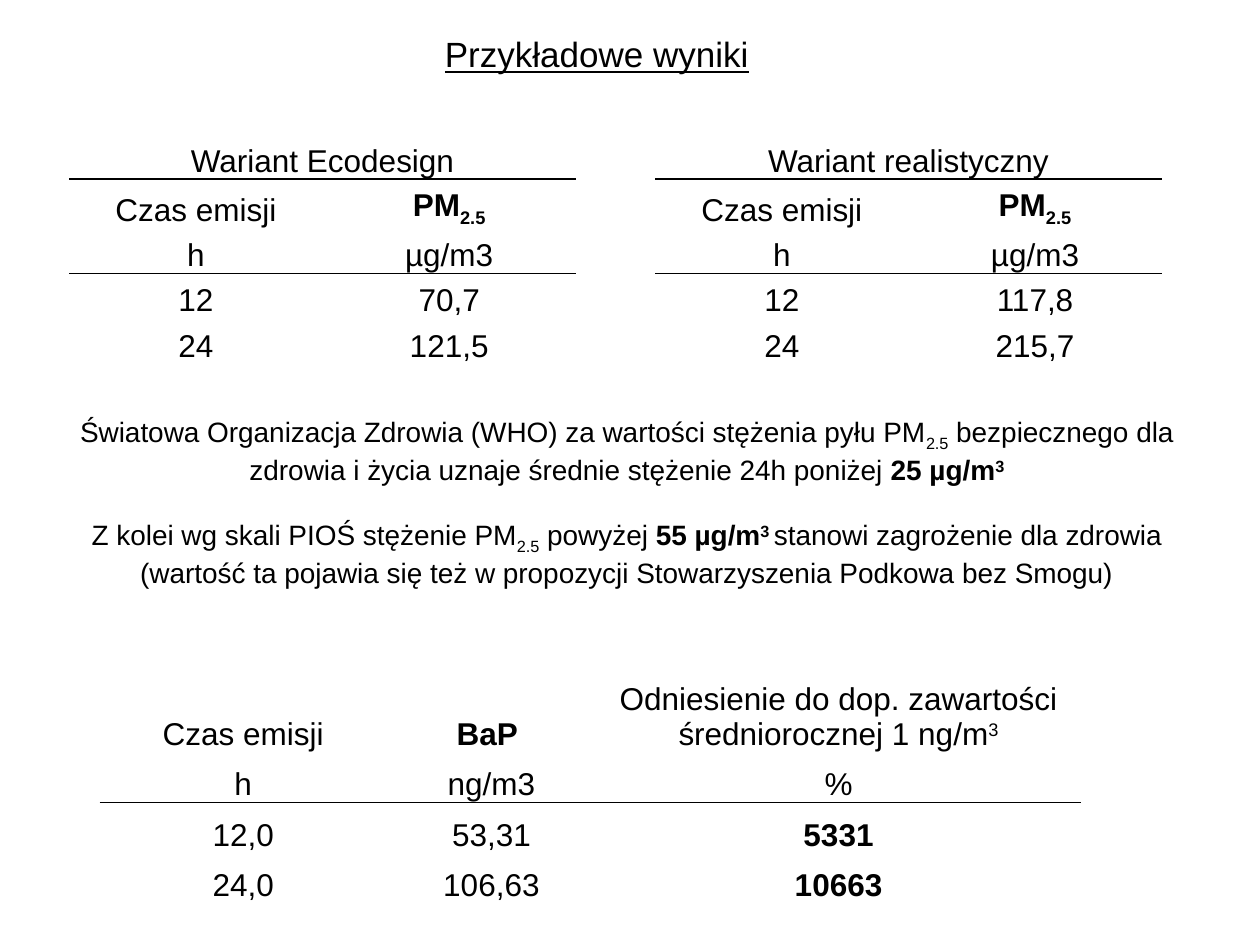
from lxml.etree import SubElement
from pptx import Presentation
from pptx.dml.color import RGBColor
from pptx.enum.text import MSO_ANCHOR, MSO_AUTO_SIZE, PP_ALIGN
from pptx.oxml.ns import qn
from pptx.util import Inches, Pt

COLORS = {"text": "000000", "rule": "000000"}
FONT = "Arial"
BASELINES = {"sub": "-25000", "sup": "30000"}
PM_HEADING = [("PM", "bold"), ("2.5", "bold sub")]
VARIANTS = [
    (0.55, "Wariant Ecodesign", "70,7", "121,5"),
    (5.2, "Wariant realistyczny", "117,8", "215,7"),
]
BAP_ROWS = [
    ["", "", [("Odniesienie do dop. zawartości średniorocznej 1 ng/m", ""), ("3", "sup")]],
    ["Czas emisji", [("BaP ", "bold")], ""],
    ["h", "ng/m3", "%"],
    ["12,0", "53,31", [("5331", "bold")]],
    ["24,0", "106,63", [("10663", "bold")]],
]
LIMITS = [
    [
        ("Światowa Organizacja Zdrowia (WHO) za wartości stężenia pyłu PM", ""),
        ("2.5", "sub"),
        (" bezpiecznego dla zdrowia i życia uznaje średnie stężenie 24h poniżej ", ""),
        ("25 µg/m", "bold"),
        ("3", "bold sup"),
    ],
    [
        ("Z kolei wg skali PIOŚ stężenie PM", ""),
        ("2.5", "sub"),
        (" powyżej ", ""),
        ("55 µg/m", "bold"),
        ("3 ", "bold sup"),
        ("stanowi zagrożenie dla zdrowia (wartość ta pojawia się też "
         "w propozycji Stowarzyszenia Podkowa bez Smogu)", ""),
    ],
]


def write_text(paragraph, content, size=18, align=PP_ALIGN.CENTER, underline=False):
    """Fill a paragraph from a string or from (text, style words) pairs."""
    paragraph.alignment = align
    pairs = [(content, "")] if isinstance(content, str) else content
    for text, style in pairs:
        run = paragraph.add_run()
        run.text = text
        run.font.name = FONT
        run.font.size = Pt(size)
        run.font.bold = "bold" in style
        run.font.underline = underline
        run.font.color.rgb = RGBColor.from_string(COLORS["text"])
        for word, baseline in BASELINES.items():
            if word in style:
                run.font._element.set("baseline", baseline)


def set_borders(cell, ruled_sides):
    """Rule the named sides of a cell and clear its other sides."""
    properties = cell._tc.get_or_add_tcPr()
    for side in "LRTB":
        line = SubElement(properties, qn(f"a:ln{side}"), w=str(Pt(1)))
        if side in ruled_sides:
            fill = SubElement(line, qn("a:solidFill"))
            SubElement(fill, qn("a:srgbClr"), val=COLORS["rule"])
        else:
            SubElement(line, qn("a:noFill"))


def add_ruled_table(slide, left, top, widths, heights, rows, ruled_rows, merge):
    """Add an unfilled table with a rule under each of the ruled rows."""
    frame = slide.shapes.add_table(
        len(rows), len(widths), Inches(left), Inches(top),
        Inches(sum(widths)), Inches(sum(heights)))
    table = frame.table
    table.first_row = table.horz_banding = False
    for column, width in zip(table.columns, widths):
        column.width = Inches(width)
    for row, height in zip(table.rows, heights):
        row.height = Inches(height)
    first, last = merge
    table.cell(*first).merge(table.cell(*last))
    for row_index, row in enumerate(rows):
        sides = ("B" if row_index in ruled_rows else "") + (
            "T" if row_index - 1 in ruled_rows else "")
        for column_index, content in enumerate(row):
            cell = table.cell(row_index, column_index)
            cell.vertical_anchor = MSO_ANCHOR.BOTTOM
            cell.margin_left = cell.margin_right = cell.margin_top = Inches(0.01)
            cell.margin_bottom = 0
            set_borders(cell, sides)
            cell.fill.background()
            if content:
                write_text(cell.text_frame.paragraphs[0], content)


def add_title(slide, text):
    """Place and format the title placeholder."""
    title = slide.shapes.title
    title.left, title.top = Inches(3.43), Inches(0.21)
    title.width, title.height = Inches(2.64), Inches(0.44)
    frame = title.text_frame
    frame.word_wrap = False
    frame.auto_size = MSO_AUTO_SIZE.SHAPE_TO_FIT_TEXT
    frame.vertical_anchor = MSO_ANCHOR.TOP
    write_text(frame.paragraphs[0], text, size=20, align=PP_ALIGN.LEFT, underline=True)


def add_limits(slide, paragraphs):
    """Add the centred text on safe concentration limits."""
    box = slide.shapes.add_textbox(Inches(0.39), Inches(3.24), Inches(9.17), Inches(1.75))
    frame = box.text_frame
    frame.word_wrap = True
    for index, content in enumerate(paragraphs):
        paragraph = frame.add_paragraph() if index else frame.paragraphs[0]
        paragraph.space_before = Pt(18 if index else 0)
        write_text(paragraph, content, size=16)


def main():
    """Build and save the slide."""
    presentation = Presentation()
    presentation.slide_width, presentation.slide_height = Inches(10), Inches(7.5)
    slide = presentation.slides.add_slide(presentation.slide_layouts[5])
    add_title(slide, "Przykładowe wyniki")
    for left, name, half_day, full_day in VARIANTS:
        rows = [[name, ""], ["Czas emisji", PM_HEADING], ["h", "µg/m3"],
                ["12", half_day], ["24", full_day]]
        add_ruled_table(slide, left, 1.03, [2.01] * 2, [0.39] * 2 + [0.36] * 3,
                        rows, ruled_rows=(0, 2), merge=((0, 0), (0, 1)))
    add_limits(slide, LIMITS)
    add_ruled_table(slide, 0.79, 5.05, [2.28, 1.66, 3.85], [0.22, 0.56] + [0.4] * 3,
                    BAP_ROWS, ruled_rows=(2,), merge=((0, 2), (1, 2)))
    presentation.save("out.pptx")


if __name__ == "__main__":
    main()
